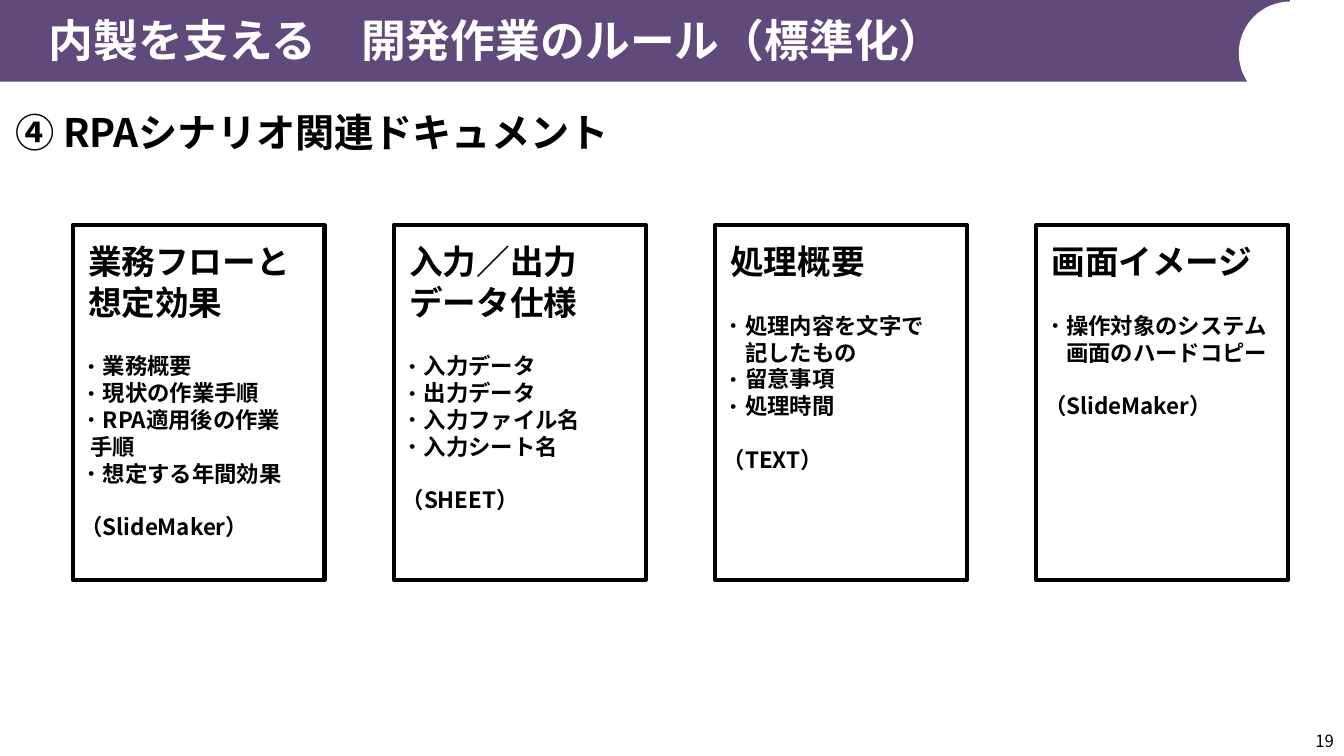
from dataclasses import dataclass

from lxml.etree import SubElement
from pptx import Presentation
from pptx.dml.color import RGBColor
from pptx.enum.shapes import MSO_SHAPE
from pptx.enum.text import MSO_ANCHOR, MSO_AUTO_SIZE, PP_ALIGN
from pptx.oxml.ns import qn
from pptx.util import Cm, Pt


@dataclass(frozen=True)
class Theme:
    font: str = "Noto Sans CJK JP"
    band: RGBColor = RGBColor(0x60, 0x4A, 0x7B)
    paper: RGBColor = RGBColor(0xFF, 0xFF, 0xFF)
    ink: RGBColor = RGBColor(0, 0, 0)
    title: int = 32
    section: int = 28
    heading: int = 24
    item: int = 16
    number: int = 12


THEME = Theme()
HEADING_GAP, FORMAT_GAP = Pt(21.6), Pt(19.2)
BULLET_HANG = 0.56

CARDS = [
    {
        "heading": ["業務フローと", "想定効果"],
        "items": [["業務概要"], ["現状の作業手順"], ["RPA適用後の作業", "手順"], ["想定する年間効果"]],
        "format": "（SlideMaker）",
        "hang": 0.25,
    },
    {
        "heading": ["入力／出力", "データ仕様"],
        "items": [["入力データ"], ["出力データ"], ["入力ファイル名"], ["入力シート名"]],
        "format": "（SHEET）",
        "hang": BULLET_HANG,
    },
    {
        "heading": ["処理概要"],
        "items": [["処理内容を文字で", "記したもの"], ["留意事項"], ["処理時間"]],
        "format": "（TEXT）",
        "hang": BULLET_HANG,
    },
    {
        "heading": ["画面イメージ"],
        "items": [["操作対象のシステム", "画面のハードコピー"]],
        "format": "（SlideMaker）",
        "hang": BULLET_HANG,
    },
]


def apply(target, values):
    for name, value in values.items():
        setattr(target, name, value)


def set_frame(frame, insets, anchor=MSO_ANCHOR.TOP):
    sides = ("margin_left", "margin_top", "margin_right", "margin_bottom")
    apply(frame, dict(zip(sides, map(Cm, insets))))
    apply(frame, {"word_wrap": True, "auto_size": MSO_AUTO_SIZE.NONE, "vertical_anchor": anchor})


def write(paragraph, text, size, color=THEME.ink, bold=True, left=0, bullet=False, **layout):
    properties = paragraph._p.get_or_add_pPr()
    properties.set("marL", str(Cm(left)))
    properties.set("indent", str(-Cm(left) if bullet else 0))
    if bullet:
        SubElement(properties, qn("a:buFont")).set("typeface", THEME.font)
        SubElement(properties, qn("a:buChar")).set("char", "・")
    else:
        SubElement(properties, qn("a:buNone"))
    apply(paragraph, {"alignment": PP_ALIGN.LEFT, "space_before": Pt(0), **layout})
    run = paragraph.add_run()
    run.text = text
    apply(run.font, {"name": THEME.font, "size": Pt(size), "bold": bold})
    run.font.color.rgb = color
    SubElement(run._r.get_or_add_rPr(), qn("a:ea")).set("typeface", THEME.font)


def place(shape, left, top, width, height):
    apply(shape, {"left": Cm(left), "top": Cm(top), "width": Cm(width), "height": Cm(height)})


def add_header(slide, left, top, width, height):
    title = slide.shapes.title
    place(title, left, top, width, height - 0.05)
    set_frame(title.text_frame, (0.1, 0.1, 0.1, 0.1), MSO_ANCHOR.MIDDLE)
    write(title.text_frame.paragraphs[0], "内製を支える　開発作業のルール（標準化）",
          THEME.title, THEME.paper, left=1.13)
    backdrop = (
        (MSO_SHAPE.RECTANGLE, THEME.band, (left, top, width - 1.36, height)),
        (MSO_SHAPE.OVAL, THEME.paper, (left + width - 2.65, top + 0.04, 2.6, 2.6)),
    )
    for outline, color, box in backdrop:
        part = slide.shapes.add_shape(outline, *map(Cm, box))
        part.shadow.inherit = False
        part.fill.solid()
        part.fill.fore_color.rgb = color
        part.line.fill.background()
        title.element.addprevious(part.element)


def add_label(slide, box, text, size, **layout):
    label = slide.shapes.add_textbox(*map(Cm, box))
    set_frame(label.text_frame, (0.25, 0.13, 0.25, 0.13))
    write(label.text_frame.paragraphs[0], text, size, **layout)


def card_lines(card):
    for text in card["heading"]:
        yield text, {"size": THEME.heading, "left": 0.19, "line_spacing": Pt(28.8)}
    body = {"size": THEME.item, "line_spacing": Pt(19.2)}
    gap = {"space_before": HEADING_GAP}
    for first, *rest in card["items"]:
        yield first, {**body, **gap, "left": BULLET_HANG, "bullet": True}
        gap = {}
        for text in rest:
            yield text, {**body, "left": card["hang"]}
    yield card["format"], {**body, "space_before": FORMAT_GAP}


def fill_card(holder, card, left, top, width, height):
    place(holder, left, top, width, height)
    holder.fill.solid()
    holder.fill.fore_color.rgb = THEME.paper
    holder.line.color.rgb = THEME.ink
    holder.line.width = Pt(3)
    frame = holder.text_frame
    set_frame(frame, (0.2, 0.41, 0.1, 0.1))
    for index, (text, style) in enumerate(card_lines(card)):
        paragraph = frame.add_paragraph() if index else frame.paragraphs[0]
        write(paragraph, text, **style)


def add_cards(slide, left, top, width, height):
    card_width = 6.35
    step = (width - card_width) / (len(CARDS) - 1)
    holders = [holder for holder in slide.placeholders if holder.placeholder_format.idx]
    for index, (holder, card) in enumerate(zip(holders, CARDS)):
        fill_card(holder, card, left + index * step, top, card_width, height)


def main():
    deck = Presentation()
    apply(deck, {"slide_width": Cm(33.87), "slide_height": Cm(19.05)})
    slide = deck.slides.add_slide(deck.slide_layouts.get_by_name("Comparison"))
    add_header(slide, 0, 0, 33.87, 2.06)
    add_label(slide, (0.13, 2.03, 17.98, 1.73), "④ RPAシナリオ関連ドキュメント",
              THEME.section, line_spacing=Pt(50))
    add_cards(slide, 1.83, 5.67, 30.63, 8.94)
    add_label(slide, (31.67, 18.29, 2.2, 0.76), "19", THEME.number,
              bold=False, alignment=PP_ALIGN.RIGHT)
    deck.save("out.pptx")


if __name__ == "__main__":
    main()
